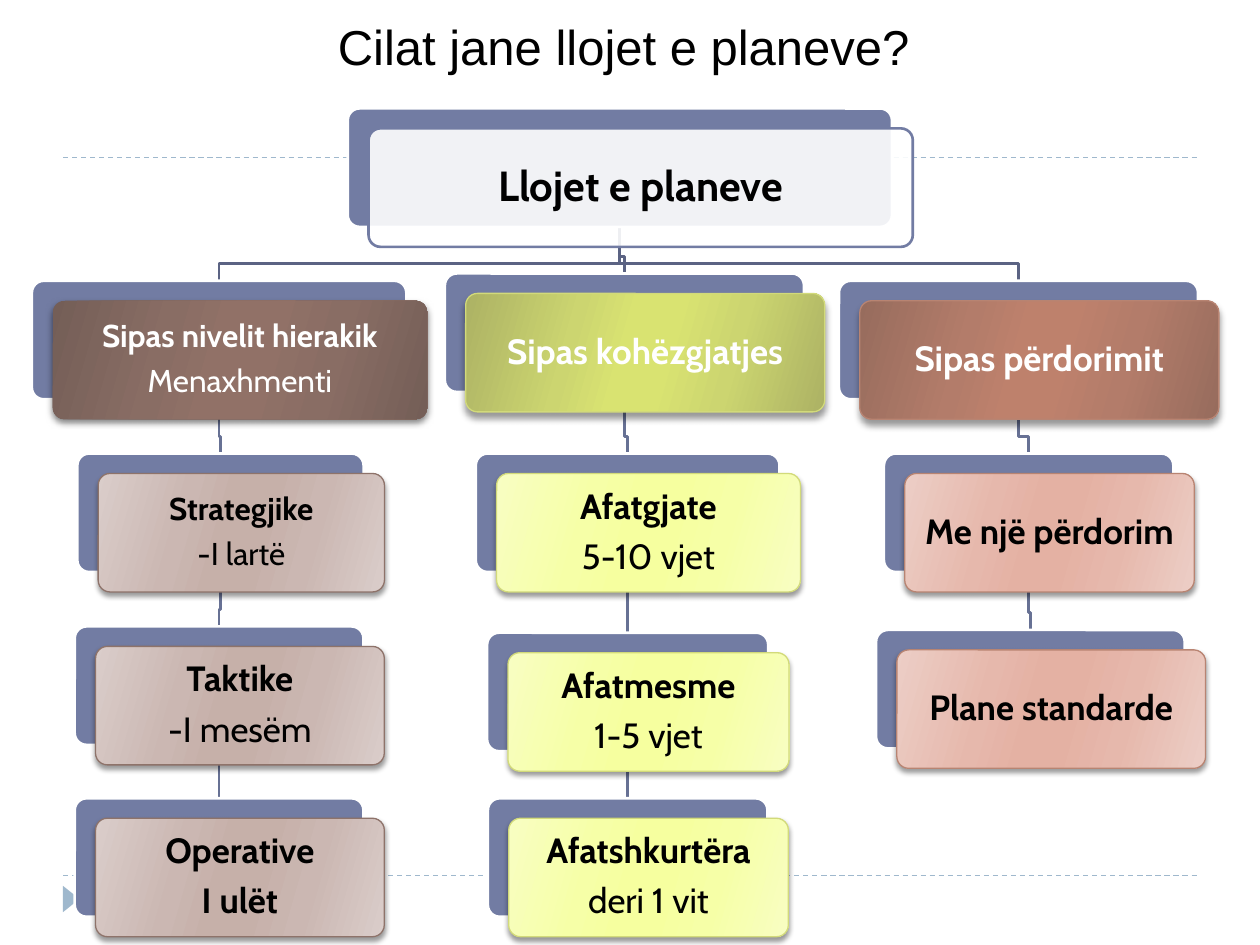
from lxml import etree
from pptx import Presentation
from pptx.dml.color import RGBColor
from pptx.enum import dml, shapes, text
from pptx.oxml import ns
from pptx.util import Pt

COLORS = {
    "back": "727CA3", "white": "FFFFFF", "black": "000000", "guide": "9FB8CD",
    "trunk": "5B6383", "branch": "677194",
}
# Gradient colours run from the edge of the card to its centre.
STYLES = {
    "root": {"line": "727CA3", "font": "black", "weight": 1.5},
    "brown": {"grad": ("745E57", "896D64", "917167"), "font": "white", "shadow": (50, 2)},
    "taupe": {"grad": ("DACDCA", "CBB7B2", "C6B0A9"), "line": "8E736A",
              "font": "black", "shadow": (40, 2)},
    "olive": {"grad": ("ACB264", "CCD570", "D9E371"), "line": "D2DA7A",
              "font": "white", "shadow": (40, 3.4)},
    "lemon": {"grad": ("F8FEC2", "F6FFA7", "F6FF9F"), "line": "D2DA7A",
              "font": "black", "shadow": (40, 2)},
    "rust": {"grad": ("976C5D", "B37C6A", "BE816C"), "line": "B88472",
             "font": "white", "shadow": (40, 3.4)},
    "pink": {"grad": ("ECCEC6", "E6B8AC", "E4B1A3"), "line": "B88472",
             "font": "black", "shadow": (40, 2)},
}
STOPS = ((0, 0), (30, 1), (45, 2), (55, 2), (73, 1), (100, 0))
CARD_H = 67.7
OFFSET_X, OFFSET_Y = 11.9, 11.4
BEND = 9.8

# Each card: centre x, top, width, text size, style, lines as (text, bold).
ROOT = (354.2, 62, 311, 24, "root", [("Llojet e planeve", True)])
COLUMNS = [
    [
        (125.2, 160.5, 214, 18, "brown",
         [("Sipas nivelit hierakik", True), ("Menaxhmenti", False)]),
        (126, 259.2, 163.6, 18, "taupe", [("Strategjike", True), ("-I lartë", False)]),
        (125.2, 358, 165, 20, "taupe", [("Taktike", True), ("-I mesëm", False)]),
        (125.2, 456.2, 165, 20, "taupe", [("Operative", True), ("I ulët", True)]),
    ],
    [
        (356.8, 156.3, 205.2, 20, "olive", [("Sipas kohëzgjatjes", True)]),
        (358.7, 259.2, 173.6, 20, "lemon", [("Afatgjate", True), ("5-10 vjet", False)]),
        (358.7, 361.6, 160.6, 20, "lemon", [("Afatmesme", True), ("1-5 vjet", False)]),
        (358.7, 456.2, 159.8, 20, "lemon", [("Afatshkurtëra", True), ("deri 1 vit", False)]),
    ],
    [
        (582, 160.5, 205.2, 20, "rust", [("Sipas përdorimit", True)]),
        (587.8, 259.2, 165.4, 20, "pink", [("Me një përdorim", True)]),
        (588.8, 360, 176.4, 20, "pink", [("Plane standarde", True)]),
    ],
]


def rgb(value):
    return RGBColor.from_string(COLORS.get(value, value))


def set_line(s, color, width):
    s.line.color.rgb = rgb(color)
    s.line.width = Pt(width)


def add_effects(s, shadow=None):
    """Replace the theme effects by an optional shadow of (opacity, distance)."""
    effects = etree.SubElement(s._element.spPr, ns.qn("a:effectLst"))
    if shadow:
        opacity, distance = shadow
        outer = etree.SubElement(effects, ns.qn("a:outerShdw"), blurRad=str(Pt(4 if opacity == 50 or distance > 2 else 3)),
                                 dist=str(Pt(distance)), dir="5400000", rotWithShape="0")
        color = etree.SubElement(outer, ns.qn("a:srgbClr"), val=COLORS["black"])
        etree.SubElement(color, ns.qn("a:alpha"), val=str(opacity * 1000))


def fill_gradient(s, colors):
    s.fill.gradient()
    s.fill.gradient_angle = 344
    stops = s._element.spPr.find(".//" + ns.qn("a:gsLst"))
    for stop in list(stops):
        stops.remove(stop)
    for position, index in STOPS:
        stop = etree.SubElement(stops, ns.qn("a:gs"), pos=str(position * 1000))
        etree.SubElement(stop, ns.qn("a:srgbClr"), val=colors[index])


def fill_translucent(s, color, opacity):
    s.fill.solid()
    s.fill.fore_color.rgb = rgb(color)
    value = s._element.spPr.find(ns.qn("a:solidFill")).find(ns.qn("a:srgbClr"))
    etree.SubElement(value, ns.qn("a:alpha"), val=str(opacity * 1000))


def add_straight(slide, x1, y1, x2, y2, color, width):
    c = slide.shapes.add_connector(shapes.MSO_CONNECTOR.STRAIGHT,
                                   Pt(x1), Pt(y1), Pt(x2), Pt(y2))
    set_line(c, color, width)
    add_effects(c)
    return c


def link_cards(slide, parent, child, color):
    """Join two cards, with a bend just above the child when they are not aligned."""
    x1, y1 = parent[0], parent[1] + CARD_H
    x2, y2 = child[:2]
    if x1 == x2:
        add_straight(slide, x1, y1, x2, y2, color, 1.5)
        return
    builder = slide.shapes.build_freeform(Pt(x1), Pt(y1))
    bend = y2 - BEND
    builder.add_line_segments([(Pt(x), Pt(y)) for x, y in ((x1, bend), (x2, bend), (x2, y2))],
                              close=False)
    s = builder.convert_to_shape()
    s.fill.background()
    set_line(s, color, 1.5)
    s.shadow.inherit = False


def add_round_rect(slide, x, y, width):
    s = slide.shapes.add_shape(shapes.MSO_SHAPE.ROUNDED_RECTANGLE,
                               Pt(x), Pt(y), Pt(width), Pt(CARD_H))
    s.adjustments[0] = 0.1
    return s


def write_lines(s, lines, size, color):
    tf = s.text_frame
    inset = Pt(size * 0.3)
    frame = {"word_wrap": True, "vertical_anchor": text.MSO_ANCHOR.MIDDLE,
             "margin_left": inset, "margin_right": inset,
             "margin_top": inset, "margin_bottom": inset}
    for name, value in frame.items():
        setattr(tf, name, value)
    for i, (words, bold) in enumerate(lines):
        p = tf.add_paragraph() if i else tf.paragraphs[0]
        layout = {"alignment": text.PP_ALIGN.CENTER, "line_spacing": 0.9,
                  "space_after": Pt(size * 0.35)}
        for name, value in layout.items():
            setattr(p, name, value)
        r = p.add_run()
        r.text = words
        for name, value in {"name": "Cabin", "size": Pt(size), "bold": bold}.items():
            setattr(r.font, name, value)
        r.font.color.rgb = rgb(color)


def add_card(slide, card):
    """Draw a backing plate and, shifted down and right, the card with its text."""
    center, top, width, size, style_name, lines = card
    style = STYLES[style_name]
    left = center - width / 2
    plate = add_round_rect(slide, left, top, width)
    plate.fill.solid()
    plate.fill.fore_color.rgb = rgb("back")
    set_line(plate, "white", 1.5)
    add_effects(plate)

    front = add_round_rect(slide, left + OFFSET_X, top + OFFSET_Y, width)
    if "grad" in style:
        fill_gradient(front, style["grad"])
    else:
        fill_translucent(front, "white", 90)
    if "line" in style:
        set_line(front, style["line"], style.get("weight", 0.75))
    else:
        front.line.fill.background()
    add_effects(front, style.get("shadow"))
    write_lines(front, lines, size, style["font"])


def add_guides(slide):
    for y in (500.4, 90):
        c = add_straight(slide, 36, y, 684, y, "guide", 0.75)
        c.line.dash_style = dml.MSO_LINE.DASH
    s = slide.shapes.add_shape(shapes.MSO_SHAPE.ISOSCELES_TRIANGLE,
                               Pt(33.1), Pt(509), Pt(15.1), Pt(9.4))
    s.rotation = 90
    s.fill.solid()
    s.fill.fore_color.rgb = rgb("guide")
    s.line.fill.background()
    s.shadow.inherit = False


def add_title(slide, words):
    s = slide.shapes.add_textbox(Pt(186), Pt(6), Pt(345.6), Pt(41))
    s.text_frame.word_wrap = False
    s.text_frame.auto_size = text.MSO_AUTO_SIZE.SHAPE_TO_FIT_TEXT
    r = s.text_frame.paragraphs[0].add_run()
    r.text = words
    r.font.name, r.font.size = "Arial", Pt(28)
    r.font.color.rgb = rgb("black")


def main():
    prs = Presentation()
    prs.slide_width, prs.slide_height = Pt(720), Pt(540)
    slide = prs.slides.add_slide(prs.slide_layouts[6])
    add_guides(slide)
    for column in COLUMNS:
        link_cards(slide, ROOT, column[0], "trunk")
        for parent, child in zip(column, column[1:]):
            link_cards(slide, parent, child, "branch")
    for card in [ROOT, *(card for column in COLUMNS for card in column)]:
        add_card(slide, card)
    add_title(slide, "Cilat jane llojet e planeve?")
    prs.save("out.pptx")


if __name__ == "__main__":
    main()
